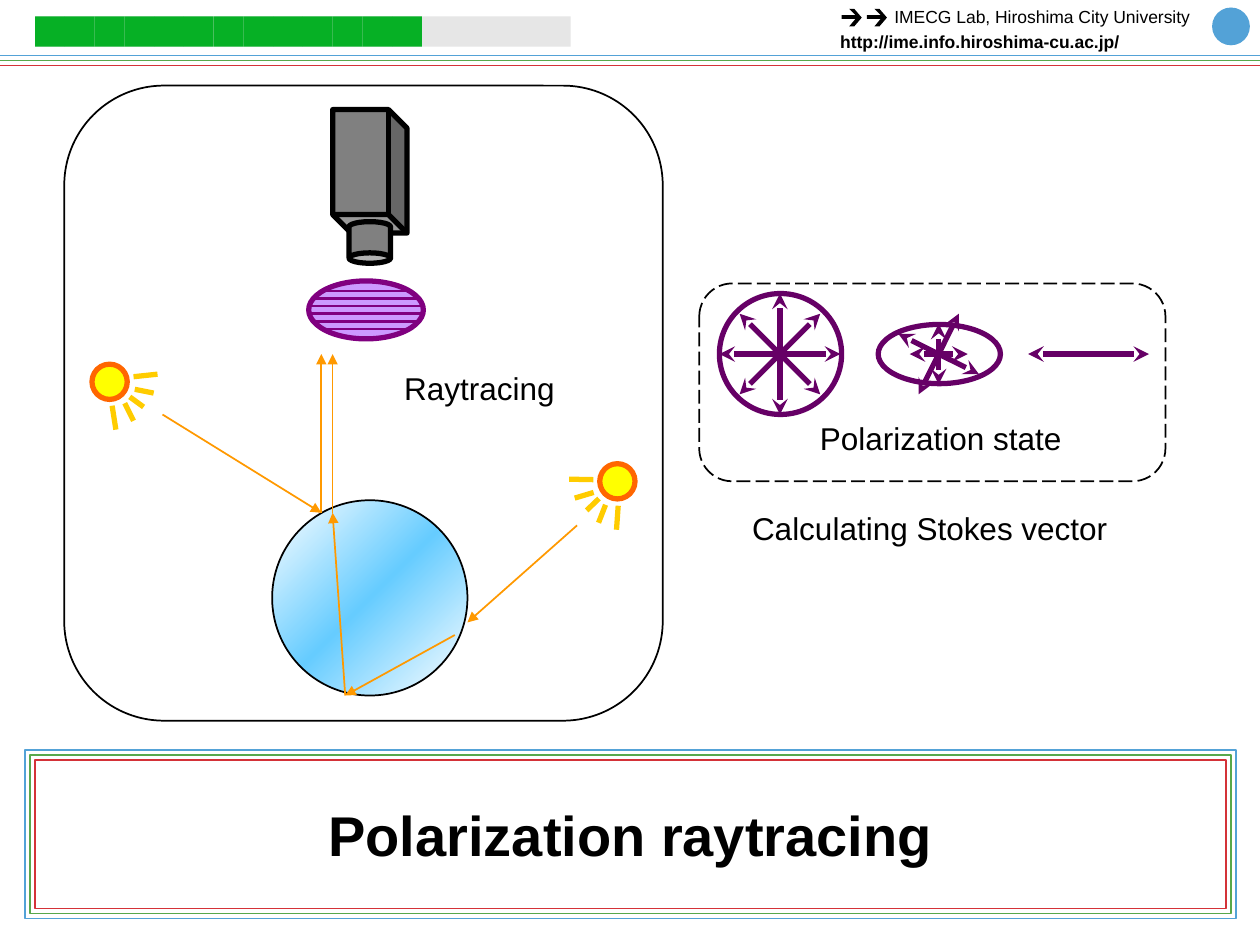
from copy import deepcopy
from math import cos, radians, sin

from pptx import Presentation
from pptx.dml.color import RGBColor
from pptx.enum.dml import MSO_LINE
from pptx.enum.shapes import MSO_CONNECTOR, MSO_SHAPE
from pptx.enum.text import MSO_ANCHOR, PP_ALIGN
from pptx.oxml.ns import qn
from pptx.util import Inches, Pt

RECT, ROUND = MSO_SHAPE.RECTANGLE, MSO_SHAPE.ROUNDED_RECTANGLE
OVAL, CUBE, CAN = MSO_SHAPE.OVAL, MSO_SHAPE.CUBE, MSO_SHAPE.CAN
STRAIGHT, LONG_DASH = MSO_CONNECTOR.STRAIGHT, MSO_LINE.LONG_DASH
CENTER, MIDDLE = PP_ALIGN.CENTER, MSO_ANCHOR.MIDDLE

COLORS = {
    "black": "000000", "white": "FFFFFF", "blue": "53A2D7", "green": "58A84B",
    "red": "D43238", "track": "E6E6E6", "progress": "06B025", "sky": "66CCFF",
    "camera": "808080", "filter": "CC99FF", "filter_edge": "800080",
    "sun": "FFFF00", "sun_edge": "FF6600", "sunbeam": "FFCC00",
    "ray": "FF9900", "wave": "660066",
}
STRIPES = ("blue", "green", "red")


def rgb(name):
    return RGBColor.from_string(COLORS[name])


def paint(shape, fill=None, edge=None, weight=1):
    shape.shadow.inherit = False
    if fill:
        shape.fill.solid()
        shape.fill.fore_color.rgb = rgb(fill)
    else:
        shape.fill.background()
    if edge:
        shape.line.color.rgb = rgb(edge)
        shape.line.width = Pt(weight)
    else:
        shape.line.fill.background()
    return shape


def add_figure(slide, preset, left, top, width, height, **style):
    box = (Inches(v) for v in (left, top, width, height))
    return paint(slide.shapes.add_shape(preset, *box), **style)


def add_line(slide, start, end, color, weight=1, head=None, tail=None):
    line = slide.shapes.add_connector(STRAIGHT, *(Inches(v) for v in (*start, *end)))
    line.line.color.rgb = rgb(color)
    line.line.width = Pt(weight)
    properties = line._element.spPr
    outline = properties.find(qn("a:ln"))
    for tag, kind in (("a:headEnd", head), ("a:tailEnd", tail)):
        if kind:
            outline.append(outline.makeelement(qn(tag), {"type": kind}))
    properties.append(properties.makeelement(qn("a:effectLst"), {}))


def format_font(paragraph, size, bold=False):
    font = paragraph.font
    for key, value in {"name": "Arial", "size": Pt(size), "bold": bold}.items():
        setattr(font, key, value)
    font.color.rgb = rgb("black")


def add_label(slide, text, left, top, width, height, size=18, bold=False, wrap=False):
    box = (Inches(v) for v in (left, top, width, height))
    frame = slide.shapes.add_textbox(*box).text_frame
    frame.word_wrap = wrap
    frame.text = text
    format_font(frame.paragraphs[0], size, bold)


def add_progress(slide, left, top, width, height, done=13, total=18):
    add_figure(slide, RECT, left, top, width, height, fill="track")
    step = width / total
    for index in range(done):
        add_figure(slide, RECT, left + index * step, top, step, height, fill="progress")


def add_bullet_arrow(slide, left, top):
    outline = [(0.06, 0.14), (0.11, 0.08), (0, 0.08), (0, 0.05), (0.11, 0.05),
               (0.06, 0), (0.1, 0), (0.16, 0.07), (0.1, 0.14)]
    points = [(Inches(left + x), Inches(top + y)) for x, y in outline]
    builder = slide.shapes.build_freeform(*points[0])
    builder.add_line_segments(points[1:], close=True)
    paint(builder.convert_to_shape(), fill="black")


def add_header(slide, left, top, width):
    for index, color in enumerate(STRIPES):
        y = top + 0.44 + index * 0.04
        add_line(slide, (left, y), (left + width, y), color)
    for offset in (6.68, 6.88):
        add_bullet_arrow(slide, left + offset, top + 0.07)
    add_label(slide, "IMECG Lab, Hiroshima City University",
              left + 7, top, 2.57, 0.27, size=10, wrap=True)
    add_label(slide, "http://ime.info.hiroshima-cu.ac.jp/",
              left + 6.57, top + 0.2, 2.76, 0.27, size=10, bold=True, wrap=True)
    add_figure(slide, OVAL, left + 9.62, top + 0.06, 0.3, 0.3, fill="blue")
    add_progress(slide, left + 0.28, top + 0.13, 4.25, 0.24)


def add_title(slide, left, top, width, height):
    for index, color in enumerate(STRIPES):
        inset = index * 0.04
        add_figure(slide, RECT, left + inset, top + inset,
                   width - 2 * inset, height - 2 * inset, edge=color)
    title = slide.shapes.title
    box = {"left": left + 0.08, "top": top + 0.08,
           "width": width - 0.16, "height": height - 0.16}
    for key, value in box.items():
        setattr(title, key, Inches(value))
    title.text_frame.text = "Polarization raytracing"
    title.text_frame.vertical_anchor = MIDDLE
    paragraph = title.text_frame.paragraphs[0]
    paragraph.alignment = CENTER
    format_font(paragraph, 32, True)


def add_camera(slide, left, top):
    for preset, x, y, width, height in ((CUBE, 0, 0, 0.59, 0.98),
                                        (CAN, 0.13, 0.89, 0.33, 0.33)):
        part = add_figure(slide, preset, left + x, top + y, width, height,
                          fill="camera", edge="black", weight=3)
        part.adjustments[0] = 0.25
        part._element.spPr.find(qn("a:xfrm")).set("flipV", "1")


def add_polarizer(slide, left, top, width, height):
    add_figure(slide, OVAL, left, top, width, height,
               fill="filter", edge="filter_edge", weight=3)
    center_x, center_y = left + width / 2, top + height / 2
    for index, half in enumerate((0.46, 0.4, 0.34)):
        for side in (-1, 1):
            y = center_y + side * (0.03 + index * 0.06)
            add_line(slide, (center_x - half, y), (center_x + half, y), "filter_edge", 1.5)


def add_sun(slide, left, top, size, turn=0):
    add_figure(slide, OVAL, left, top, size, size, fill="sun", edge="sun_edge", weight=3)
    center_x, center_y = left + size / 2, top + size / 2
    c, s = cos(radians(turn)), sin(radians(turn))
    beams = [((0.19, -0.04), (0.38, -0.06)), ((0.2, 0.06), (0.35, 0.09)),
             ((0.16, 0.12), (0.27, 0.2)), ((0.12, 0.17), (0.19, 0.31)),
             ((0.02, 0.19), (0.05, 0.38))]
    for beam in beams:
        start, end = [(center_x + x * c - y * s, center_y + x * s + y * c) for x, y in beam]
        add_line(slide, start, end, "sunbeam", 3)


def add_sphere(slide, left, top, size):
    sphere = add_figure(slide, OVAL, left, top, size, size, edge="black")
    sphere.fill.gradient()
    sphere.fill.gradient_angle = 315
    stop_list = sphere._element.spPr.find(".//" + qn("a:gsLst"))
    stop_list.append(deepcopy(stop_list[0]))
    shades = ((0, "white"), (0.5, "sky"), (1, "white"))
    for stop, (position, color) in zip(sphere.fill.gradient_stops, shades):
        stop.position = position
        stop.color.rgb = rgb(color)


def add_raytracing(slide, left, top, width, height):
    add_figure(slide, ROUND, left, top, width, height, edge="black")
    add_sphere(slide, left + 1.65, top + 3.29, 1.55)
    add_camera(slide, left + 2.13, top + 0.19)
    add_polarizer(slide, left + 1.94, top + 1.55, 0.91, 0.46)
    add_sun(slide, left + 0.22, top + 2.21, 0.28)
    add_sun(slide, left + 4.25, top + 3, 0.28, 100)
    rays = [((0.78, 2.61), (2.04, 3.39)), ((2.04, 3.39), (2.04, 2.13)),
            ((2.13, 3.39), (2.13, 2.13)), ((2.23, 4.84), (2.13, 3.39)),
            ((3.1, 4.36), (2.23, 4.84)), ((4.07, 3.49), (3.2, 4.26))]
    for ray in rays:
        start, end = [(left + x, top + y) for x, y in ray]
        add_line(slide, start, end, "ray", tail="triangle")
    add_label(slide, "Raytracing", left + 2.6, top + 2.2, 1.4, 0.41)


def add_wave(slide, center_x, center_y, arms):
    for x, y in arms:
        add_line(slide, (center_x - x, center_y - y), (center_x + x, center_y + y),
                 "wave", 3, head="stealth", tail="stealth")


def add_polarization(slide, left, top, width, height):
    frame = add_figure(slide, ROUND, left, top, width, height, edge="black")
    frame.line.dash_style = LONG_DASH
    states = [
        (0.64, 0.96, [(0, 0.48), (0.48, 0), (0.32, 0.32), (0.32, -0.32)]),
        (1.9, 0.47, [(0, 0.24), (0.23, 0), (0.32, 0.16), (0.16, -0.32)]),
        (3.09, 0, [(0.48, 0)]),
    ]
    center_y = top + 0.56
    for offset, spread, arms in states:
        if spread:
            add_figure(slide, OVAL, left + offset - 0.48, center_y - spread / 2,
                       0.97, spread, edge="wave", weight=3)
        add_wave(slide, left + offset, center_y, arms)
    add_label(slide, "Polarization state", left + 0.86, top + 1.03, 2.13, 0.41)
    add_label(slide, "Calculating Stokes vector", left + 0.32, top + 1.74, 3.05, 0.4)


def main():
    deck = Presentation()
    deck.slide_width, deck.slide_height = Inches(10), Inches(7.5)
    slide = deck.slides.add_slide(deck.slide_layouts[5])
    add_header(slide, 0, 0, 10)
    add_title(slide, 0.2, 5.95, 9.61, 1.34)
    add_raytracing(slide, 0.51, 0.68, 4.75, 5.04)
    add_polarization(slide, 5.55, 2.25, 3.7, 1.57)
    deck.save("out.pptx")


if __name__ == "__main__":
    main()
